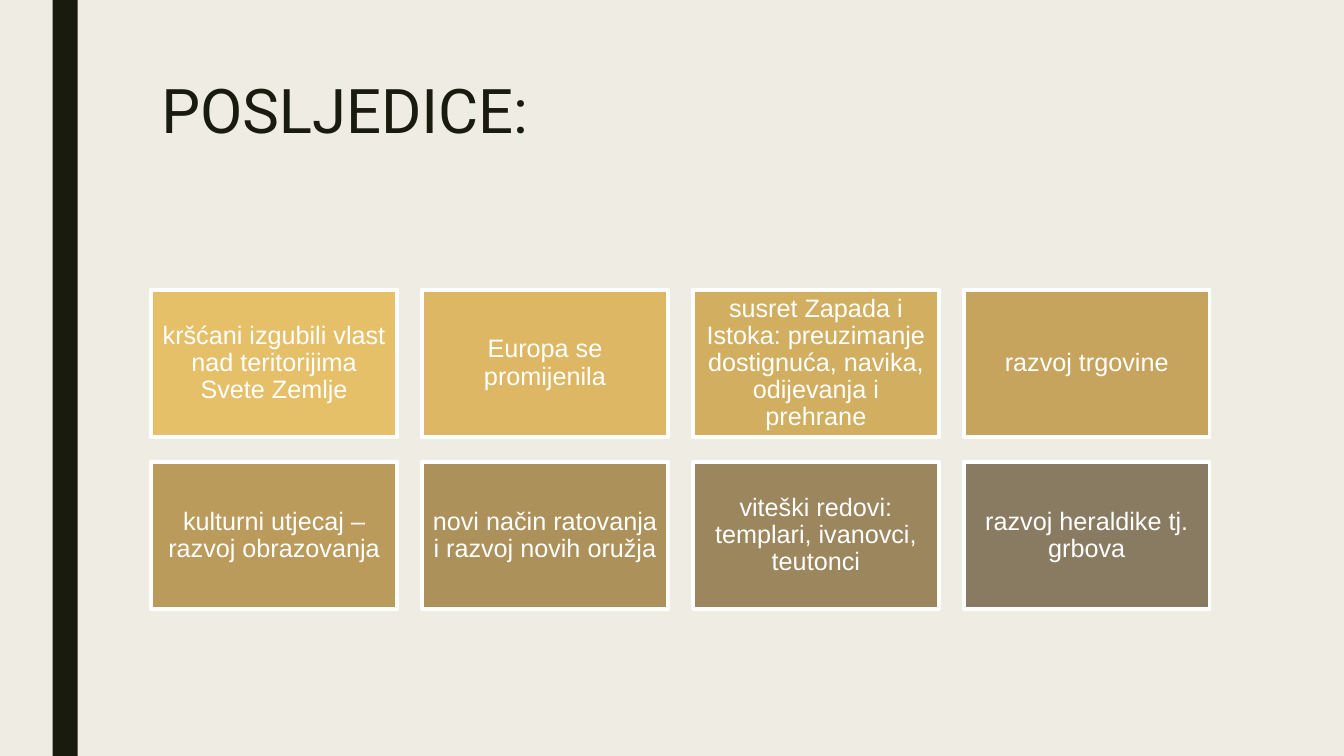
import pptx
import pptx.dml.color
import pptx.enum.shapes
import pptx.enum.text
import pptx.util

PX = 9525  # EMU per px, 96 px to the inch
DARK, WHITE, PAPER = "191B0E", "FFFFFF", "EFEDE3"
COLUMNS = 4
LEFT, TOP = 144, 276
PITCH_X, PITCH_Y = 258, 164
CARD_W, CARD_H = 234, 140
CONSEQUENCES = [
    ("kršćani izgubili vlast nad teritorijima Svete Zemlje", "E6C069"),
    ("Europa se promijenila", "DDB764"),
    ("susret Zapada i Istoka: preuzimanje dostignuća, navika, "
     "odijevanja i prehrane", "D2AE60"),
    ("razvoj trgovine", "C6A45D"),
    ("kulturni utjecaj – razvoj obrazovanja", "BA9B5C"),
    ("novi način ratovanja i razvoj novih oružja", "AC915B"),
    ("viteški redovi: templari, ivanovci, teutonci", "9B865D"),
    ("razvoj heraldike tj. grbova", "897B61"),
]


def px(*lengths):
    return [pptx.util.Emu(n * PX) for n in lengths]


def paint(fill, color):
    fill.solid()
    fill.fore_color.rgb = pptx.dml.color.RGBColor.from_string(color)


def write(tf, text, font, size, color, align, spacing):
    p = tf.paragraphs[0]
    p.alignment = align
    p.line_spacing = spacing
    r = p.add_run()
    r.text = text
    r.font.name = font
    r.font.size = pptx.util.Pt(size)
    paint(r.font.fill, color)


def add_title(s, text):
    sp = s.shapes.title
    sp.left, sp.top, sp.width, sp.height = px(144, 72, 1008, 156)
    tf = sp.text_frame
    tf.word_wrap = True
    tf.auto_size = pptx.enum.text.MSO_AUTO_SIZE.NONE
    tf.vertical_anchor = pptx.enum.text.MSO_ANCHOR.TOP
    write(tf, text, "Roboto", 44, DARK, pptx.enum.text.PP_ALIGN.LEFT, 0.89)


def add_box(s, x, y, w, h, color):
    sp = s.shapes.add_shape(pptx.enum.shapes.MSO_SHAPE.RECTANGLE, *px(x, y, w, h))
    sp.shadow.inherit = False
    paint(sp.fill, color)
    sp.line.fill.background()
    return sp


def add_card(s, x, y, text, color):
    sp = add_box(s, x, y, CARD_W, CARD_H, color)
    paint(sp.line.fill, WHITE)
    sp.line.width = pptx.util.Pt(2.75)
    tf = sp.text_frame
    tf.word_wrap = True
    tf.vertical_anchor = pptx.enum.text.MSO_ANCHOR.MIDDLE
    tf.margin_left = tf.margin_top = tf.margin_right = tf.margin_bottom = px(7)[0]
    write(tf, text, "Arial", 18, WHITE, pptx.enum.text.PP_ALIGN.CENTER, 0.9)


def main():
    prs = pptx.Presentation()
    prs.slide_width, prs.slide_height = px(1280, 720)
    s = prs.slides.add_slide(prs.slide_layouts[5])
    paint(s.background.fill, PAPER)
    add_box(s, 50, 0, 24, 720, DARK)
    add_title(s, "POSLJEDICE:")
    for i, (text, color) in enumerate(CONSEQUENCES):
        row, column = divmod(i, COLUMNS)
        add_card(s, LEFT + column * PITCH_X, TOP + row * PITCH_Y, text, color)
    prs.save("out.pptx")


if __name__ == "__main__":
    main()
